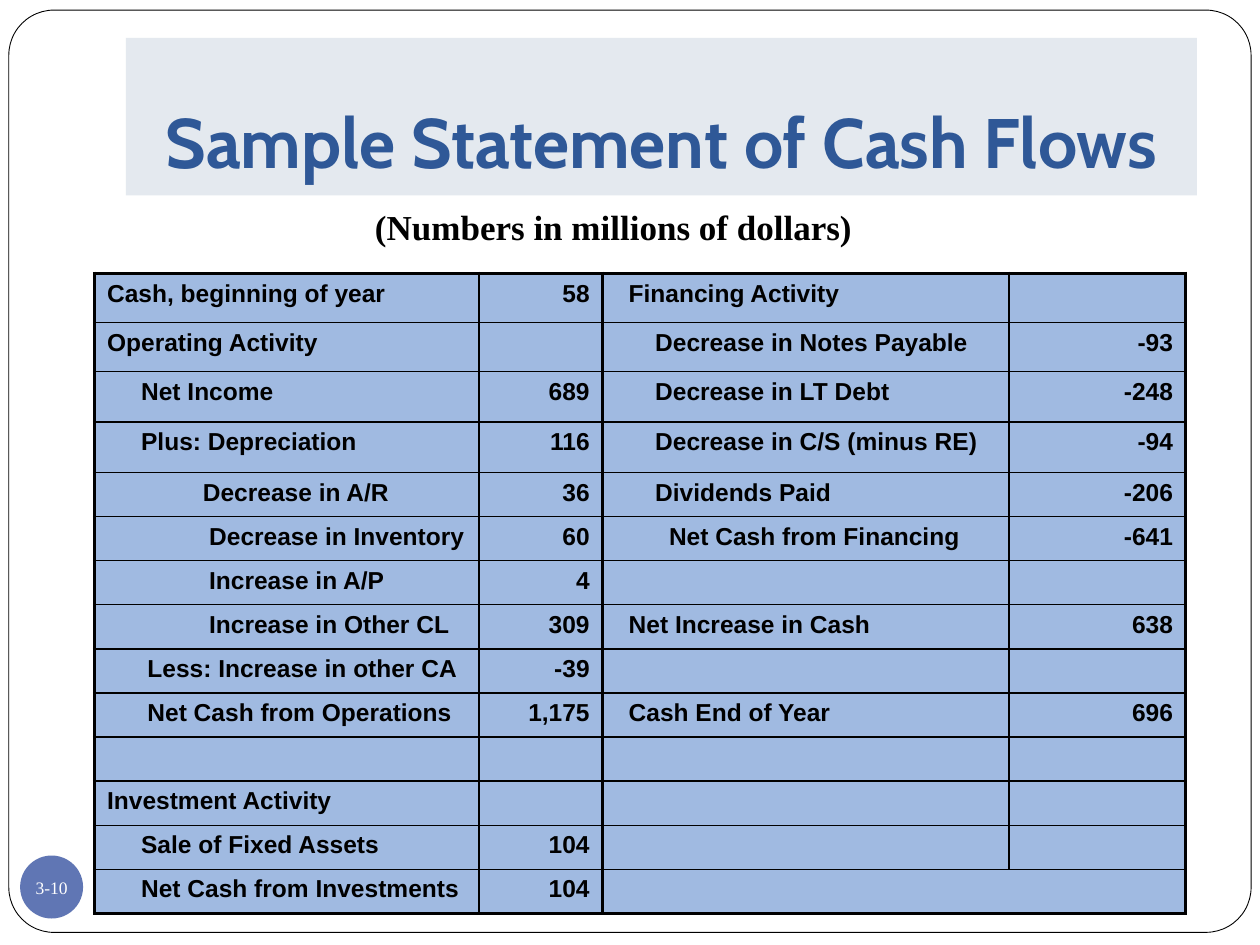
import dataclasses
import typing

import lxml.etree
import pptx
import pptx.dml.color
import pptx.enum.shapes
import pptx.enum.text
import pptx.oxml.ns
import pptx.util

Inches = pptx.util.Inches
Pt = pptx.util.Pt
qn = pptx.oxml.ns.qn
RGB = pptx.dml.color.RGBColor.from_string
SHAPE = pptx.enum.shapes.MSO_SHAPE
ALIGN = pptx.enum.text.PP_ALIGN
ANCHOR = pptx.enum.text.MSO_ANCHOR


@dataclasses.dataclass(frozen=True)
class Style:
    font: str
    size: float
    color: str
    bold: bool = True


@dataclasses.dataclass(frozen=True)
class Theme:
    paper: str = "FFFFFF"
    ink: str = "000000"
    banner: str = "E4E9EF"
    badge: str = "6076B4"
    cell: str = "A0BAE1"
    thin: float = 1
    thick: float = 2.25
    title: Style = Style("Cabin", 40, "2F5897")
    units: Style = Style("Times New Roman", 20, "000000")
    number: Style = Style("Times New Roman", 10, "FFFFFF", False)
    entry: Style = Style("Arial", 14, "000000")


class Entry(typing.NamedTuple):
    label: str = ""
    amount: str = ""
    indent: float = 0


THEME = Theme()
BLANK = Entry()

# Left half: operations and investments
SOURCES = [
    Entry("Cash, beginning of year", "58"),
    Entry("Operating Activity"),
    Entry("Net Income", "689", 0.27),
    Entry("Plus: Depreciation", "116", 0.27),
    Entry("Decrease in A/R", "36", 0.76),
    Entry("Decrease in Inventory", "60", 0.81),
    Entry("Increase in A/P", "4", 0.81),
    Entry("Increase in Other CL", "309", 0.81),
    Entry("Less: Increase in other CA", "-39", 0.32),
    Entry("Net Cash from Operations", "1,175", 0.32),
    BLANK,
    Entry("Investment Activity"),
    Entry("Sale of Fixed Assets", "104", 0.27),
    Entry("Net Cash from Investments", "104", 0.27),
]

# Right half: financing and the closing balance
FINANCING = [
    Entry("Financing Activity", indent=0.11),
    Entry("Decrease in Notes Payable", "-93", 0.32),
    Entry("Decrease in LT Debt", "-248", 0.32),
    Entry("Decrease in C/S (minus RE)", "-94", 0.32),
    Entry("Dividends Paid", "-206", 0.32),
    Entry("Net Cash from Financing", "-641", 0.43),
    BLANK,
    Entry("Net Increase in Cash", "638", 0.11),
    BLANK,
    Entry("Cash End of Year", "696", 0.11),
] + [BLANK] * 4

COLUMN_WIDTHS = [3.05, 0.98, 3.23, 1.4]
ROW_HEIGHTS = [0.39] * 2 + [0.4] * 2 + [0.35] * 10


def write(paragraph, text: str, style: Style, align=ALIGN.CENTER) -> None:
    paragraph.alignment = align
    font = paragraph.font
    font.name, font.size, font.bold = style.font, Pt(style.size), style.bold
    font.color.rgb = RGB(style.color)
    if text:
        paragraph.add_run().text = text
    else:  # keeps an empty row from growing
        end = lxml.etree.SubElement(paragraph._p, qn("a:endParaRPr"))
        end.set("sz", str(int(style.size * 100)))


def add_panel(slide, kind, box: tuple, fill: str):
    panel = slide.shapes.add_shape(kind, *map(Inches, box))
    panel.shadow.inherit = False
    panel.fill.solid()
    panel.fill.fore_color.rgb = RGB(fill)
    panel.line.fill.background()
    return panel


def set_borders(cell, widths: dict[str, float]) -> None:
    properties = cell._tc.get_or_add_tcPr()
    for side, width in widths.items():
        line = lxml.etree.SubElement(properties, qn(f"a:ln{side}"), w=str(Pt(width)))
        fill = lxml.etree.SubElement(line, qn("a:solidFill"))
        lxml.etree.SubElement(fill, qn("a:srgbClr"), val=THEME.ink)


def fill_cell(cell, text: str, align, indent: float, widths: dict[str, float]) -> None:
    set_borders(cell, widths)
    cell.fill.solid()
    cell.fill.fore_color.rgb = RGB(THEME.cell)
    paragraph = cell.text_frame.paragraphs[0]
    write(paragraph, text, THEME.entry, align)
    if indent:
        paragraph._p.get_or_add_pPr().set("marL", str(Inches(indent)))


def add_statement(slide) -> None:
    last = len(ROW_HEIGHTS) - 1
    frame = slide.shapes.add_table(
        len(ROW_HEIGHTS), len(COLUMN_WIDTHS), Inches(0.75), Inches(2.17),
        Inches(sum(COLUMN_WIDTHS)), Inches(sum(ROW_HEIGHTS)))
    statement = frame.table
    statement.first_row = statement.horz_banding = False
    for column, width in zip(statement.columns, COLUMN_WIDTHS):
        column.width = Inches(width)
    for row, height in zip(statement.rows, ROW_HEIGHTS):
        row.height = Inches(height)
    statement.cell(last, 2).merge(statement.cell(last, 3))

    def edge(is_outer: bool) -> float:
        return THEME.thick if is_outer else THEME.thin

    for r, halves in enumerate(zip(SOURCES, FINANCING)):
        for half, entry in enumerate(halves):
            label, amount = (statement.cell(r, 2 * half + i) for i in (0, 1))
            ends = {"T": edge(r == 0), "B": edge(r == last)}
            fill_cell(label, entry.label, ALIGN.LEFT, entry.indent,
                      {"L": THEME.thick, "R": edge(label.is_merge_origin), **ends})
            fill_cell(amount, entry.amount, ALIGN.RIGHT, 0,
                      {"L": THEME.thin, "R": THEME.thick, **ends})


def main() -> None:
    deck = pptx.Presentation()
    deck.slide_width, deck.slide_height = Inches(10), Inches(7.5)
    slide = deck.slides.add_slide(deck.slide_layouts[6])

    # Rounded page outline
    outline = add_panel(slide, SHAPE.ROUNDED_RECTANGLE, (0.07, 0.08, 9.86, 7.32), THEME.paper)
    outline.adjustments[0] = 0.049
    outline.line.color.rgb = RGB(THEME.ink)
    outline.line.width = Pt(0.5)

    # Page number
    badge = add_panel(slide, SHAPE.OVAL, (0.16, 6.79, 0.5, 0.5), THEME.badge).text_frame
    badge.margin_left = badge.margin_right = badge.margin_top = badge.margin_bottom = 0
    badge.word_wrap = False
    badge.vertical_anchor = ANCHOR.MIDDLE
    write(badge.paragraphs[0], "3-10", THEME.number)

    # Title banner
    title = add_panel(slide, SHAPE.RECTANGLE, (1, 0.3, 8.5, 1.25), THEME.banner).text_frame
    title.margin_bottom = Inches(0.1)
    title.word_wrap = True
    title.vertical_anchor = ANCHOR.BOTTOM
    write(title.paragraphs[0], "Sample Statement of Cash Flows", THEME.title)

    add_statement(slide)

    # Units line
    units = slide.shapes.add_textbox(*map(Inches, (2.33, 1.58, 5.08, 0.44))).text_frame
    units.word_wrap = True
    write(units.paragraphs[0], "(Numbers in millions of dollars)", THEME.units)

    deck.save("out.pptx")


if __name__ == "__main__":
    main()
